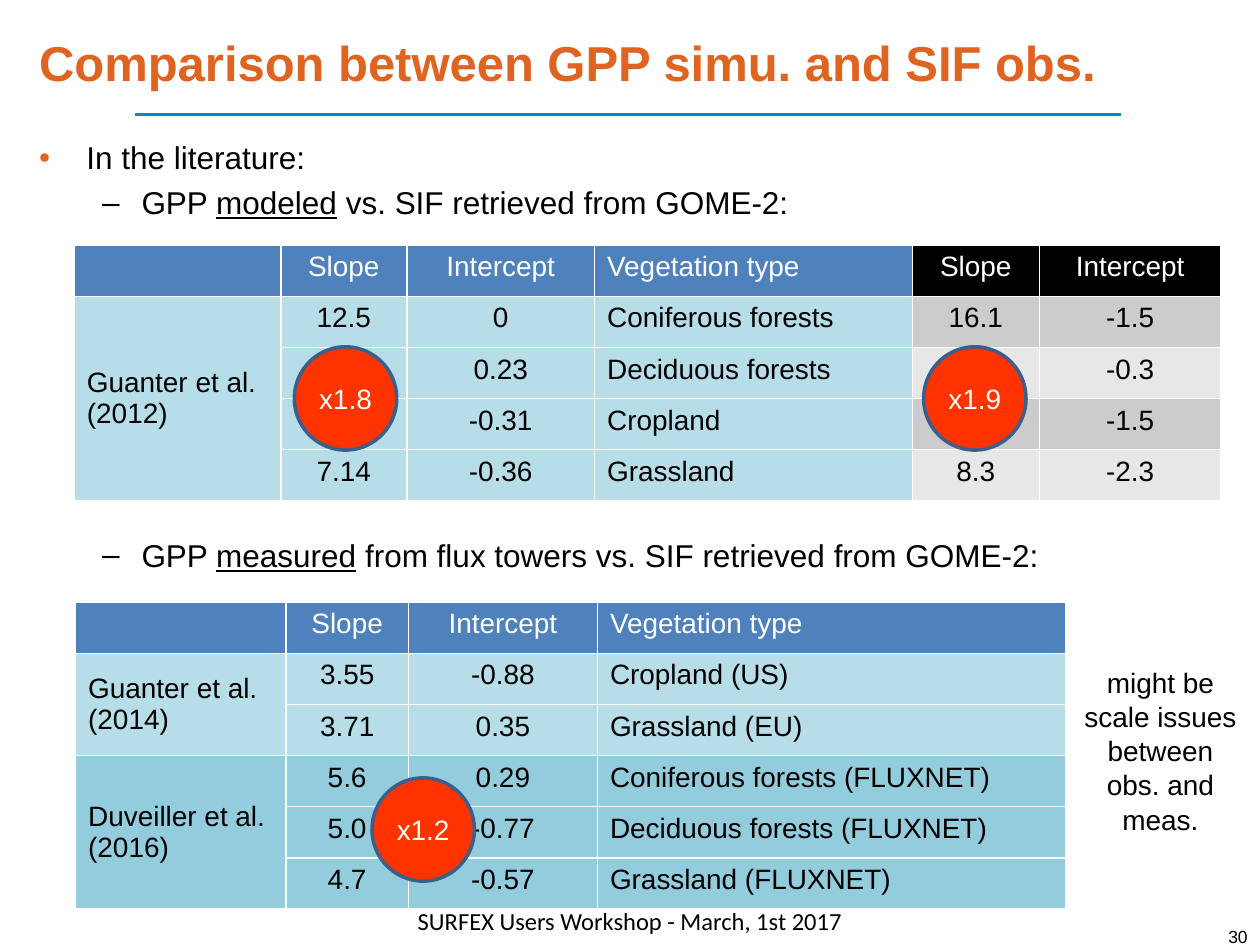
from dataclasses import dataclass
from lxml.etree import SubElement
from pptx import Presentation
from pptx.dml.color import RGBColor
from pptx.enum.shapes import MSO_CONNECTOR, MSO_SHAPE
from pptx.enum.text import MSO_ANCHOR, PP_ALIGN
from pptx.oxml.ns import qn
from pptx.util import Pt


@dataclass(frozen=True)
class Theme:
    face: str = "Arial"
    foot: str = "Calibri"
    big: int = 28
    body: int = 18
    cell: int = 16
    note: int = 14
    tiny: int = 10
    black: str = "000000"
    white: str = "FFFFFF"
    orange: str = "DF6421"
    rule: str = "008FBD"
    blue: str = "4F81BD"
    pale: str = "B7DEE8"
    teal: str = "93CDDD"
    dark: str = "CCCCCC"
    light: str = "E7E7E7"
    red: str = "FF3300"
    edge: str = "3A5F8C"


T = Theme()
ROW = 29.2
LEFT, MID = PP_ALIGN.LEFT, PP_ALIGN.CENTER

MODEL = [
    ["", "Slope", "Intercept", "Vegetation type"],
    ["Guanter et al. (2012)", "12.5", "0", "Coniferous forests"],
    ["", "", "0.23", "Deciduous forests"],
    ["", "", "-0.31", "Cropland"],
    ["", "7.14", "-0.36", "Grassland"],
]
OURS = [
    ["Slope", "Intercept"],
    ["16.1", "-1.5"],
    ["", "-0.3"],
    ["", "-1.5"],
    ["8.3", "-2.3"],
]
TOWER = [
    ["", "Slope", "Intercept", "Vegetation type"],
    ["Guanter et al. (2014)", "3.55", "-0.88", "Cropland (US)"],
    ["", "3.71", "0.35", "Grassland (EU)"],
    ["Duveiller et al. (2016)", "5.6", "0.29", "Coniferous forests (FLUXNET)"],
    ["", "5.0", "-0.77", "Deciduous forests (FLUXNET)"],
    ["", "4.7", "-0.57", "Grassland (FLUXNET)"],
]


def apply(item, form):
    for name, value in form.items():
        setattr(item, name, value)


def write(para, text, size, color=T.black, **form):
    run = para.add_run()
    run.text = text
    apply(run.font, {"name": T.face, "size": Pt(size), **form})
    run.font.color.rgb = RGBColor.from_string(color)


def paint(fill, color):
    fill.solid()
    fill.fore_color.rgb = RGBColor.from_string(color)


def add_box(slide, x, y, w, h, anchor=MSO_ANCHOR.TOP):
    frame = slide.shapes.add_textbox(Pt(x), Pt(y), Pt(w), Pt(h)).text_frame
    apply(frame, {"word_wrap": True, "vertical_anchor": anchor})
    return frame


def add_label(slide, box, text, size, align=MID, color=T.black,
              anchor=MSO_ANCHOR.TOP, **form):
    para = add_box(slide, *box, anchor).paragraphs[0]
    para.alignment = align
    write(para, text, size, color, **form)
    return para


def add_rule(slide, x, y, end):
    line = slide.shapes.add_connector(
        MSO_CONNECTOR.STRAIGHT, Pt(x), Pt(y), Pt(end), Pt(y))
    line.line.width = Pt(1.25)
    line.line.color.rgb = RGBColor.from_string(T.rule)
    SubElement(line._element.spPr, qn("a:effectLst"))


def mark(para, sign, color, left, hang):
    """Give the paragraph a bullet sign with a hanging indent."""
    props = para._p.get_or_add_pPr()
    props.set("marL", str(Pt(left)))
    props.set("indent", str(-Pt(hang)))
    tint = SubElement(props, qn("a:buClr"))
    SubElement(tint, qn("a:srgbClr"), val=color)
    SubElement(props, qn("a:buFont"), typeface=T.face)
    SubElement(props, qn("a:buChar"), char=sign)


def add_dash(para, key, rest):
    """Write a second-level line with one underlined word."""
    mark(para, "–", T.black, 58.5, 22.5)
    write(para, "GPP ", T.body)
    write(para, key, T.body, underline=True)
    write(para, rest, T.body)


def add_edges(cell):
    props = cell._tc.get_or_add_tcPr()
    for spot, side in enumerate(("lnL", "lnR", "lnT", "lnB")):
        line = props.makeelement(qn("a:" + side), {"w": str(Pt(1))})
        fill = SubElement(line, qn("a:solidFill"))
        SubElement(fill, qn("a:srgbClr"), val=T.white)
        props.insert(spot, line)


def add_grid(slide, x, y, cols, rows, fills, spans=()):
    """fills has one colour per row; spans lists first and last merged rows."""
    table = slide.shapes.add_table(
        len(rows), len(cols), Pt(x), Pt(y), Pt(sum(cols)),
        Pt(ROW * len(rows))).table
    apply(table, {"first_row": False, "horz_banding": False})
    for col, width in zip(table.columns, cols):
        col.width = Pt(width)
    for r, (row, shade) in enumerate(zip(rows, fills)):
        table.rows[r].height = Pt(ROW)
        for c, text in enumerate(row):
            cell = table.cell(r, c)
            paint(cell.fill, shade)
            add_edges(cell)
            para = cell.text_frame.paragraphs[0]
            para.alignment = LEFT if len(cols) == 4 and c in (0, 3) else MID
            if text:
                write(para, text, T.cell, T.black if r else T.white)
            else:
                SubElement(para._p, qn("a:endParaRPr"), sz=str(T.cell * 100))
    for first, last in spans:
        head = table.cell(first, 0)
        head.merge(table.cell(last, 0))
        head.vertical_anchor = MSO_ANCHOR.MIDDLE


def add_badge(slide, x, y, text):
    disc = slide.shapes.add_shape(
        MSO_SHAPE.OVAL, Pt(x), Pt(y), Pt(58.5), Pt(59))
    disc.shadow.inherit = False
    paint(disc.fill, T.red)
    disc.line.width = Pt(2)
    disc.line.color.rgb = RGBColor.from_string(T.edge)
    frame = disc.text_frame
    apply(frame, {"word_wrap": False, "vertical_anchor": MSO_ANCHOR.MIDDLE})
    para = frame.paragraphs[0]
    para.alignment = MID
    write(para, text, T.cell, T.white)


def main():
    deck = Presentation()
    apply(deck, {"slide_width": Pt(720), "slide_height": Pt(540)})
    slide = deck.slides.add_slide(deck.slide_layouts[6])

    add_rule(slide, 77, 65.5, 640.8)
    add_label(slide, (15.3, 8.6, 687, 54),
              "Comparison between GPP simu. and SIF obs.", T.big, LEFT,
              T.orange, MSO_ANCHOR.MIDDLE, bold=True)

    frame = add_box(slide, 15.3, 75.6, 687, 56)
    para = frame.paragraphs[0]
    mark(para, "•", T.orange, 27, 27)
    write(para, "In the literature:", T.body)
    para = frame.add_paragraph()
    add_dash(para, "modeled", " vs. SIF retrieved from GOME-2:")
    para.space_before = Pt(4)
    frame = add_box(slide, 15.3, 302.8, 687, 30)
    add_dash(frame.paragraphs[0], "measured",
             " from flux towers vs. SIF retrieved from GOME-2:")

    add_label(slide, (675.4, 525.4, 44.6, 20), "30", T.tiny,
              PP_ALIGN.RIGHT, anchor=MSO_ANCHOR.MIDDLE)
    add_label(slide, (0, 514, 720, 24.5),
              "SURFEX Users Workshop - March, 1st 2017", T.note, name=T.foot)

    add_grid(slide, 42.5, 140.2, [118, 72, 107.3, 267.8], MODEL,
             [T.blue] + [T.pale] * 4, [(1, 4)])
    add_grid(slide, 521.3, 140.2, [72.7, 103.7], OURS,
             [T.black] + [T.dark, T.light] * 2)
    add_badge(slide, 168.2, 198.2, "x1.8")
    add_badge(slide, 527.8, 198.2, "x1.9")
    add_grid(slide, 43.2, 344.2, [120.2, 70, 108, 267.8], TOWER,
             [T.blue] + [T.pale] * 2 + [T.teal] * 3, [(1, 2), (3, 5)])
    para = add_label(slide, (611.3, 376.2, 103.7, 104.4),
                     "might be scale issues between obs. and meas.", T.cell)
    para.line_spacing = 1.02
    add_badge(slide, 212.6, 444.5, "x1.2")

    deck.save("out.pptx")


if __name__ == "__main__":
    main()
